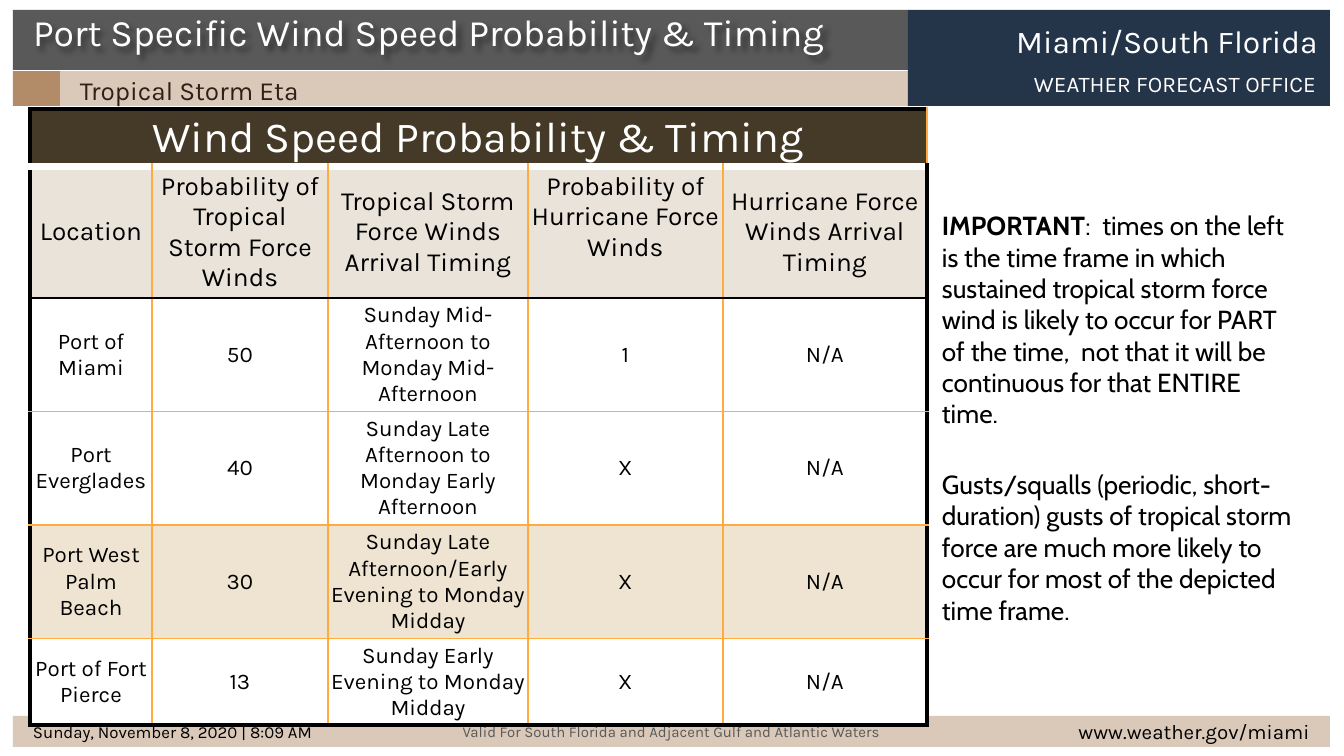
from lxml import etree
from pptx import Presentation
from pptx import util as u
from pptx.dml.color import RGBColor
from pptx.enum import shapes, text
from pptx.oxml.ns import qn

EMU_PER_PX = 914400 / 134.4
COLORS = {
    "white": "FFFFFF", "black": "000000", "gray": "595959", "navy": "24354A",
    "sand": "CBB29B", "tan": "B28B69", "umber": "453A27", "heading": "E9E3D9",
    "highlight": "EFE4D1", "orange": "FFAB40", "bark": "2C2017",
}
LEFT, CENTER, RIGHT = text.PP_ALIGN.LEFT, text.PP_ALIGN.CENTER, text.PP_ALIGN.RIGHT
TOP, MIDDLE = text.MSO_ANCHOR.TOP, text.MSO_ANCHOR.MIDDLE

COLUMN_WIDTHS = [122, 176, 200, 195, 204]
ROW_HEIGHTS = [50, 113, 101, 101, 101, 85]
TABLE_TITLE = "Wind Speed Probability & Timing"
ROWS = [
    ["Location", "Probability of Tropical Storm Force Winds",
     "Tropical Storm Force Winds Arrival Timing",
     "Probability of Hurricane Force Winds", "Hurricane Force Winds Arrival Timing"],
    ["Port of Miami", "50", "Sunday Mid-Afternoon to Monday Mid-Afternoon", "1", "N/A"],
    ["Port Everglades", "40", "Sunday Late Afternoon to Monday Early Afternoon", "X", "N/A"],
    ["Port West Palm Beach", "30",
     "Sunday Late Afternoon/Early Evening to Monday Midday", "X", "N/A"],
    ["Port of Fort Pierce", "13", "Sunday Early Evening to Monday Midday", "X", "N/A"],
]
ROW_FILLS = ["umber", "heading", "white", "white", "highlight", "white"]
ROW_SIZES = [23, 14, 12, 12, 12, 12]
# Border above each row, then the one below the last row
ROW_RULES = [("black", 2.25), ("white", 4.5), ("black", 1), ("orange", 1),
             ("orange", 1), ("orange", 1), ("black", 2.25)]


def px(value):
    return u.Emu(round(value * EMU_PER_PX))


def rgb(name):
    return RGBColor.from_string(COLORS[name])


def format_font(font, size, color, name="Karla", bold=False):
    font.size = u.Pt(size)
    font.name = name
    font.bold = bold
    font.color.rgb = rgb(color)


def set_frame(frame, insets, anchor):
    frame.word_wrap = True
    frame.vertical_anchor = anchor
    frame.margin_left, frame.margin_top, frame.margin_right, frame.margin_bottom = map(px, insets)


def write_line(frame, words, size, color, align=LEFT):
    frame.text = words
    para = frame.paragraphs[0]
    para.alignment = align
    format_font(para.runs[0].font, size, color)


def add_bar(page, place, color, opacity=100):
    bar = page.shapes.add_shape(shapes.MSO_SHAPE.RECTANGLE, *map(px, place))
    bar.shadow.inherit = False
    bar.line.fill.background()
    bar.fill.solid()
    bar.fill.fore_color.rgb = rgb(color)
    if opacity < 100:
        shade = bar._element.spPr.find(".//" + qn("a:srgbClr"))
        etree.SubElement(shade, qn("a:alpha"), val=str(opacity * 1000))
    return bar


def add_label(page, place, words, size, color, align=LEFT, insets=(0, 0, 0, 0), anchor=TOP):
    box = page.shapes.add_textbox(*map(px, place))
    set_frame(box.text_frame, insets, anchor)
    write_line(box.text_frame, words, size, color, align)


def add_title(page):
    title = page.shapes.title
    title.left, title.top, title.width, title.height = map(px, (13, 9, 898, 46))
    set_frame(title.text_frame, (20, 0, 0, 0), TOP)
    title.text_frame.auto_size = text.MSO_AUTO_SIZE.NONE
    write_line(title.text_frame, "Port Specific Wind Speed Probability & Timing", 20, "white")
    effects = etree.SubElement(title._element.spPr, qn("a:effectLst"))
    shadow = etree.SubElement(effects, qn("a:outerShdw"), blurRad="38100", dist="38100",
                              dir="2700000", algn="tl")
    shade = etree.SubElement(shadow, qn("a:srgbClr"), val=COLORS["black"])
    etree.SubElement(shade, qn("a:alpha"), val="43000")
    page.shapes._spTree.append(title._element)  # in front of the header bars


def set_borders(cell, rules):
    """Draw (color, points) rules in the order left, right, top, bottom."""
    properties = cell._tc.get_or_add_tcPr()
    for side, (color, width) in zip("LRTB", rules):
        line = etree.SubElement(properties, qn(f"a:ln{side}"), w=str(u.Pt(width)))
        fill = etree.SubElement(line, qn("a:solidFill"))
        etree.SubElement(fill, qn("a:srgbClr"), val=COLORS[color])


def format_cell(cell, row, column):
    last = len(COLUMN_WIDTHS) - 1
    edge, inner = ("black", 2.25), ("orange", 1)
    set_borders(cell, [edge if column == 0 else inner, edge if column == last else inner,
                       ROW_RULES[row], ROW_RULES[row + 1]])
    cell.fill.solid()
    cell.fill.fore_color.rgb = rgb(ROW_FILLS[row])
    cell.vertical_anchor = MIDDLE
    cell.margin_left = cell.margin_right = cell.margin_top = cell.margin_bottom = px(3)


def add_wind_table(page):
    place = (30, 109, sum(COLUMN_WIDTHS), sum(ROW_HEIGHTS))
    table = page.shapes.add_table(len(ROW_HEIGHTS), len(COLUMN_WIDTHS), *map(px, place)).table
    table.first_row = table.horz_banding = False
    for column, width in zip(table.columns, COLUMN_WIDTHS):
        column.width = px(width)
    for row, height in zip(table.rows, ROW_HEIGHTS):
        row.height = px(height)
    for row in range(len(ROW_HEIGHTS)):
        for column in range(len(COLUMN_WIDTHS)):
            cell = table.cell(row, column)
            format_cell(cell, row, column)
            if row:
                write_line(cell.text_frame, ROWS[row - 1][column], ROW_SIZES[row], "black", CENTER)
    heading = table.cell(0, 0)
    heading.merge(table.cell(0, len(COLUMN_WIDTHS) - 1))
    write_line(heading.text_frame, TABLE_TITLE, ROW_SIZES[0], "white", CENTER)
    table.cell(1, 3).margin_bottom = px(33)  # this heading sits one half line higher


def add_note(page):
    frame = page.shapes.add_textbox(*map(px, (937, 214, 370, 407))).text_frame
    set_frame(frame, (5, 3, 5, 3), MIDDLE)
    para = frame.paragraphs[0]
    for words in (
        "IMPORTANT",
        ":  times on the left is the time frame in which sustained tropical storm force wind "
        "is likely to occur for PART of the time,  not that it will be continuous for that "
        "ENTIRE time.",
    ):
        span = para.add_run()
        span.text = words
        format_font(span.font, 14, "black", "Cabin", bold=words == "IMPORTANT")
    para = frame.add_paragraph()
    para.space_before = u.Pt(21)
    para.text = ("Gusts/squalls (periodic, short-duration) gusts of tropical storm force are "
                 "much more likely to occur for most of the depicted time frame.")
    format_font(para.runs[0].font, 14, "black", "Cabin")


def add_frame_bars(page):
    add_bar(page, (60, 71, 848, 35), "sand", 70)
    add_bar(page, (13, 10, 895, 60), "gray")
    footer = add_bar(page, (13, 716, 1317, 31), "sand", 70)
    set_frame(footer.text_frame, (20, 0, 0, 0), MIDDLE)
    write_line(footer.text_frame, "Sunday, November 8, 2020 | 8:09 AM", 9, "black")
    add_label(page, (1036, 716, 294, 31), "www.weather.gov/miami", 11, "black", RIGHT,
              (20, 0, 20, 0), MIDDLE)
    add_bar(page, (13, 71, 47, 35), "tan")
    add_bar(page, (908, 10, 422, 96), "navy")
    add_label(page, (1013, 22, 305, 39), "Miami/South Florida", 17, "white", RIGHT)
    add_label(page, (919, 67, 402, 32), "WEATHER FORECAST OFFICE", 12, "white", RIGHT,
              (8, 3, 5, 3))
    add_label(page, (13, 716, 1317, 31),
              "Valid For South Florida and Adjacent Gulf and Atlantic Waters", 8, "gray",
              CENTER, (20, 0, 20, 0), MIDDLE)


def main():
    deck = Presentation()
    deck.slide_width, deck.slide_height = px(1344), px(756)
    page = deck.slides.add_slide(deck.slide_layouts[5])
    add_frame_bars(page)
    add_wind_table(page)
    add_title(page)
    add_label(page, (60, 71, 636, 36), "Tropical Storm Eta", 14, "bark", LEFT, (20, 3, 5, 3))
    add_note(page)
    deck.save("out.pptx")


if __name__ == "__main__":
    main()
